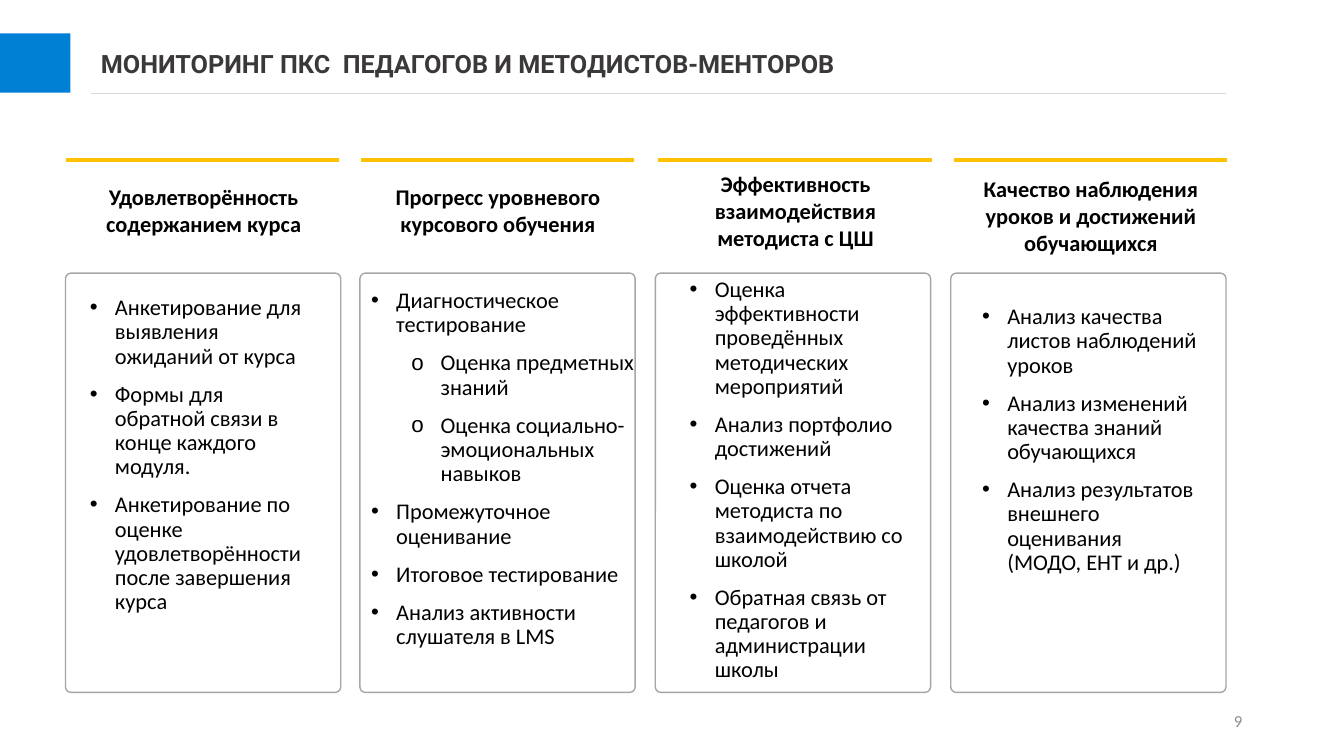
from dataclasses import dataclass

from lxml import etree
from pptx import Presentation
from pptx.dml.color import RGBColor
from pptx.enum.shapes import MSO_CONNECTOR, MSO_SHAPE
from pptx.enum.text import MSO_ANCHOR, MSO_AUTO_SIZE, PP_ALIGN
from pptx.oxml.ns import qn
from pptx.util import Pt

RECT, ROUND = MSO_SHAPE.RECTANGLE, MSO_SHAPE.ROUNDED_RECTANGLE
LINE = MSO_CONNECTOR.STRAIGHT
LEFT, MID, RIGHT = PP_ALIGN.LEFT, PP_ALIGN.CENTER, PP_ALIGN.RIGHT
TOP, CENTER = MSO_ANCHOR.TOP, MSO_ANCHOR.MIDDLE
FIXED = MSO_AUTO_SIZE.NONE
PX = 9144


@dataclass(frozen=True)
class Theme:
    font: str = "Calibri"
    face: str = "Roboto"
    title: str = "3B3838"
    ink: str = "000000"
    pale: str = "8C8C8C"
    white: str = "FFFFFF"
    blue: str = "0080D5"
    gold: str = "FFC000"
    edge: str = "A6A6A6"
    rule: str = "D9D9D9"
    big: int = 18
    text: int = 16
    small: int = 12


class Deck:
    def __init__(self, theme, wide, high):
        self.theme = theme
        self.file = Presentation()
        self.file.slide_width = wide * PX
        self.file.slide_height = high * PX
        self.slide = self.file.slides.add_slide(self.file.slide_layouts[4])
        self.shapes = self.slide.shapes
        self.slots = [s for s in self.slide.placeholders
                      if s.placeholder_format.idx in (1, 2, 3, 4)]

    def place(self, item, box):
        item.left, item.top, item.width, item.height = [n * PX for n in box]
        item.element.getparent().append(item.element)

    def frame(self, item, anchor=TOP):
        frame = item.text_frame
        frame.word_wrap = True
        frame.auto_size = FIXED
        frame.vertical_anchor = anchor
        return frame

    def run(self, para, text, size, color, bold=False, font=None):
        run = para.add_run()
        run.text = text
        run.font.name = font or self.theme.font
        run.font.size = Pt(size)
        run.font.bold = bold
        run.font.color.rgb = RGBColor.from_string(color)

    def title(self, text, box):
        item = self.shapes.title
        self.place(item, box)
        para = self.frame(item).paragraphs[0]
        para.alignment = LEFT
        self.run(para, text, self.theme.big, self.theme.title, True,
                 self.theme.face)

    def label(self, text, box, size, color, align, bold=False, anchor=TOP):
        item = self.shapes.add_textbox(*[n * PX for n in box])
        para = self.frame(item, anchor).paragraphs[0]
        para.alignment = align
        self.run(para, text, size, color, bold)

    def list(self, rows, box):
        item = self.slots.pop(0)
        self.place(item, box)
        frame = self.frame(item)
        for num, (deep, text) in enumerate(rows):
            para = frame.add_paragraph() if num else frame.paragraphs[0]
            para.alignment = LEFT
            para.line_spacing = 0.9
            para.space_before = Pt(10)
            para.space_after = Pt(0)
            self.bullet(para, deep)
            self.run(para, text, self.theme.text, self.theme.ink)

    def bullet(self, para, deep):
        mark, start, hang = ("o", 69, 29) if deep else ("•", 25, 25)
        props = para._p.get_or_add_pPr()
        props.set("marL", str(start * PX))
        props.set("indent", str(-hang * PX))
        etree.SubElement(props, qn("a:buChar")).set("char", mark)

    def block(self, kind, box, fill, edge=None):
        item = self.shapes.add_shape(kind, *[n * PX for n in box])
        item.shadow.inherit = False
        item.fill.solid()
        item.fill.fore_color.rgb = RGBColor.from_string(fill)
        if edge:
            item.line.color.rgb = RGBColor.from_string(edge)
            item.line.width = Pt(1)
        else:
            item.line.fill.background()
        return item

    def card(self, box):
        item = self.block(ROUND, box, self.theme.white, self.theme.edge)
        item.adjustments[0] = 0.02

    def line(self, left, top, wide, color, size):
        item = self.shapes.add_connector(
            LINE, left * PX, top * PX, (left + wide) * PX, top * PX)
        item.line.color.rgb = RGBColor.from_string(color)
        item.line.width = Pt(size)
        etree.SubElement(item.element.spPr, qn("a:effectLst"))


COLS = [
    (65, "Удовлетворённость содержанием курса", (84, 177, 236, 64),
     (79, 289, 241, 338), [
         (0, "Анкетирование для выявления ожиданий от курса"),
         (0, "Формы для обратной связи в конце каждого модуля."),
         (0, "Анкетирование по оценке удовлетворённости после завершения курса"),
     ]),
    (358, "Прогресс уровневого курсового обучения", (376, 177, 236, 64),
     (358, 282, 286, 336), [
         (0, "Диагностическое тестирование"),
         (1, "Оценка предметных знаний"),
         (1, "Оценка социально-эмоциональных навыков"),
         (0, "Промежуточное оценивание"),
         (0, "Итоговое тестирование"),
         (0, "Анализ активности слушателя в LMS"),
     ]),
    (653, "Эффективность взаимодействия методиста с ЦШ", (653, 164, 272, 91),
     (674, 271, 253, 355), [
         (0, "Оценка эффективности проведённых методических мероприятий"),
         (0, "Анализ портфолио достижений"),
         (0, "Оценка отчета методиста по взаимодействию со школой"),
         (0, "Обратная связь от педагогов и администрации школы"),
     ]),
    (946, "Качество наблюдения уроков и достижений обучающихся",
     (964, 169, 236, 91), (964, 298, 236, 319), [
         (0, "Анализ качества листов наблюдений уроков"),
         (0, "Анализ изменений качества знаний обучающихся"),
         (0, "Анализ результатов внешнего оценивания (МОДО, ЕНТ и др.)"),
     ]),
]


def main():
    theme = Theme()
    deck = Deck(theme, 1333, 750)
    deck.title("МОНИТОРИНГ ПКС  ПЕДАГОГОВ И МЕТОДИСТОВ-МЕНТОРОВ",
               (90, 43, 1103, 40))
    deck.line(90, 93, 1126, theme.rule, 0.5)
    deck.block(RECT, (0, 33, 70, 59), theme.blue)
    for num, (left, head, spot, box, rows) in enumerate(COLS):
        deck.card((65 + 878 * num // 3, 271, 273, 416))
        deck.line(left, 159, 271, theme.gold, 3)
        deck.label(head, spot, theme.text, theme.ink, MID, True)
        deck.list(rows, box)
    deck.label("9", (942, 695, 300, 40), theme.small, theme.pale, RIGHT,
               anchor=CENTER)
    deck.file.save("out.pptx")


if __name__ == "__main__":
    main()
